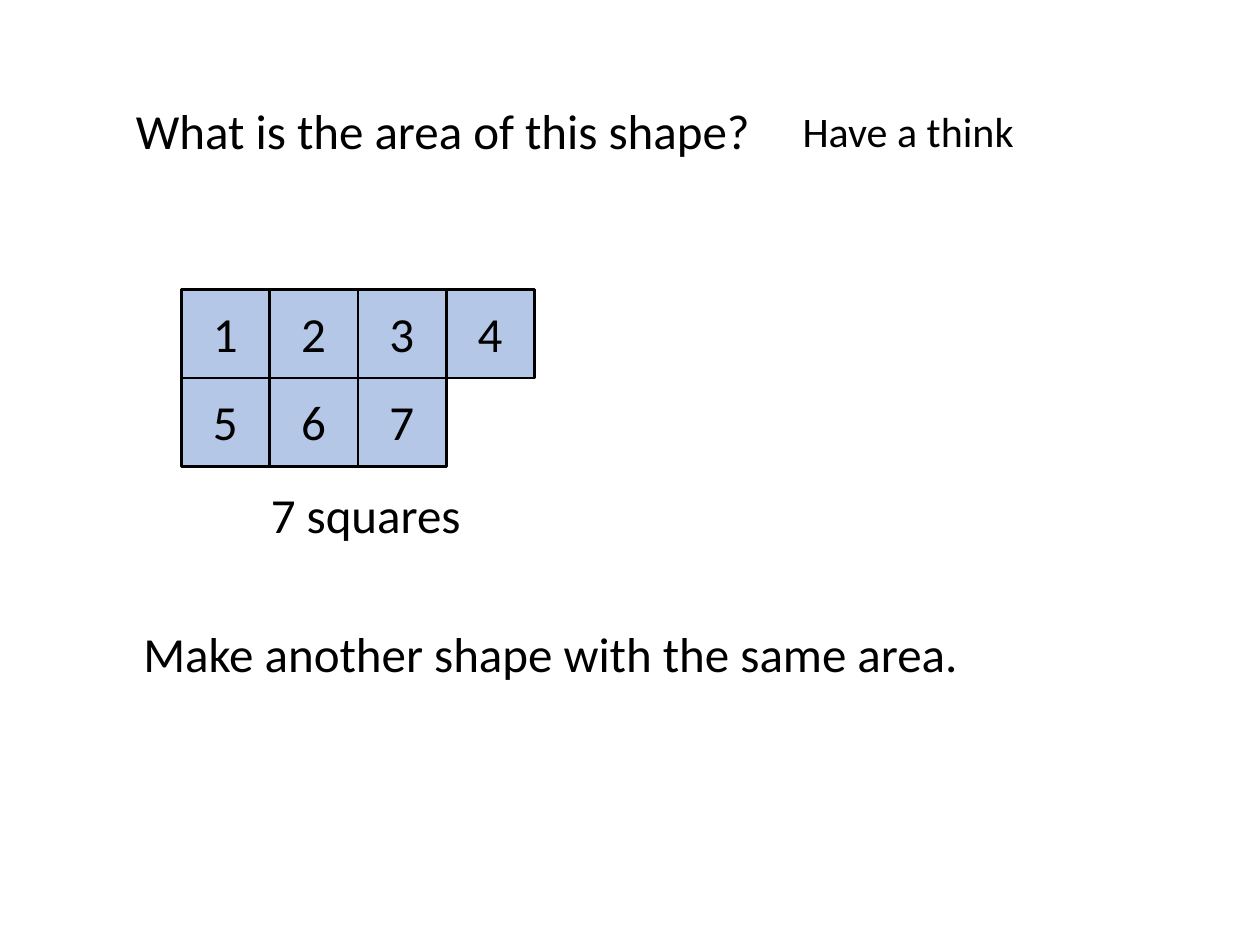
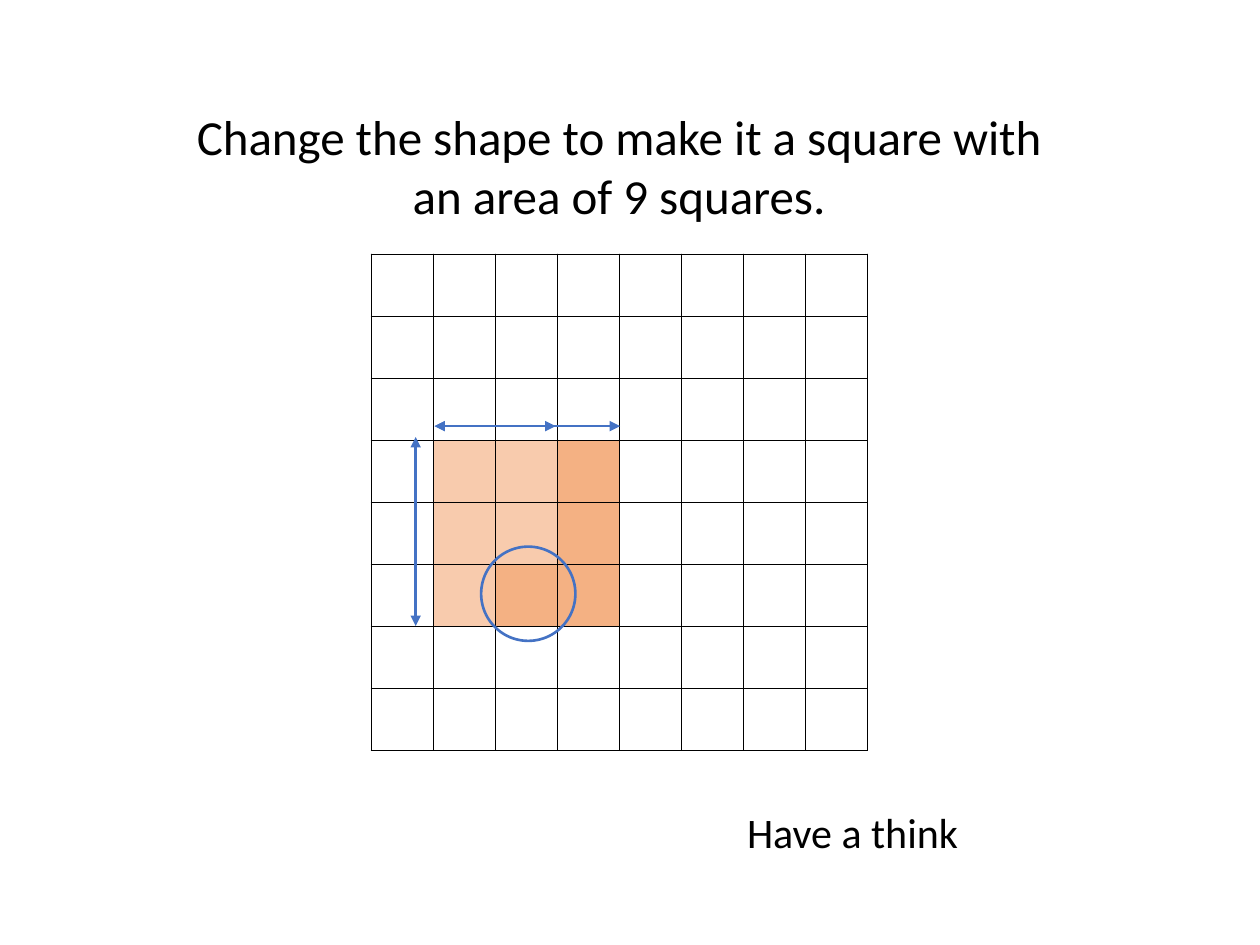
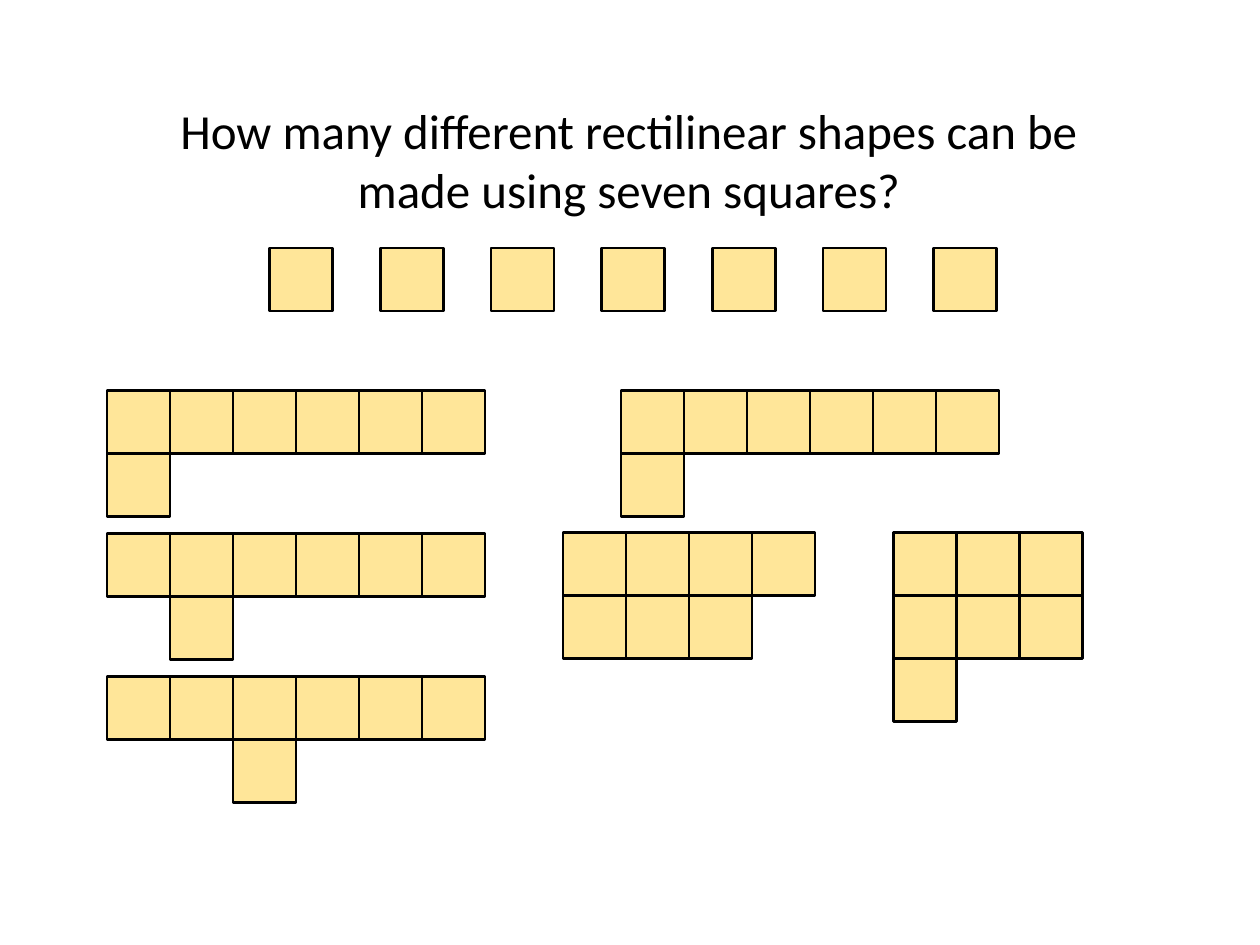
from lxml import etree
from pptx import Presentation
from pptx.dml.color import RGBColor
from pptx.enum.shapes import MSO_CONNECTOR, MSO_SHAPE
from pptx.enum.text import MSO_AUTO_SIZE, PP_ALIGN
from pptx.oxml.ns import qn
from pptx.util import Cm, Pt

RECTANGLE, OVAL = MSO_SHAPE.RECTANGLE, MSO_SHAPE.OVAL
STRAIGHT = MSO_CONNECTOR.STRAIGHT
LEFT, CENTER = PP_ALIGN.LEFT, PP_ALIGN.CENTER

FONT = "Calibri"
BODY, PROMPT = 28, 24
LINE_WIDTH = 1.5
COLORS = {
    "ink": "000000", "counted": "B4C7E7", "yellow": "FFE699",
    "start": "F8CBAD", "added": "F4B183", "mark": "4472C4",
}
THINK = "Have a think"

# Slide 1: text, left, top, width, height, size (lengths in cm)
AREA_TEXTS = [
    ("What is the area of this shape?", 2.49, 1.9, 18.16, 1.45, BODY),
    (THINK, 15.93, 2.01, 5.82, 1.27, PROMPT),
    ("7 squares", 5.21, 9.65, 7.57, 1.45, BODY),
    ("Make another shape with the same area.", 2.64, 12.45, 18.16, 1.45, BODY),
]
COUNTED_SHAPE = ["####", "###"]
COUNTED_AT, COUNTED_SIDE = (3.66, 5.84), 1.78

# Slide 2: the grid after each step, s = starting square, a = added square
CHANGE_TITLE = "Change the shape to make it a square with an area of 9 squares."
GRID_STEPS = [
    [".ss", ".ss", ".s."],
    [".ss", ".ss", ".sa"],
    [".ssa", ".ssa", ".saa"],
]
GRID_AT, GRID_COUNT, GRID_SIDE, FIRST_FILLED_ROW = (7.49, 5.13), 8, 1.25, 3
FILL_KEYS = {"s": "start", "a": "added"}
CIRCLE = (9.7, 11.02, 1.9, 1.9)
ARROWS = [
    (8.76, 8.59, 11.2, 8.59),
    (8.38, 8.81, 8.38, 12.62),
    (8.76, 8.59, 12.5, 8.59),
]

# Slide 3: loose squares, then arrangements of seven
SEVEN_TITLE = "How many different rectilinear shapes can be made using seven squares?"
SEVEN_SIDE = 1.27
LOOSE_AT, LOOSE_STEP, LOOSE_COUNT = (5.44, 5.0), 2.23, 7
ARRANGEMENTS = [
    (2.16, 7.87, ["######", "#"]),
    (2.16, 10.76, ["######", ".#"]),
    (2.16, 13.64, ["######", "..#"]),
    (12.52, 7.87, ["######", "#"]),
    (11.35, 10.74, ["####", "###"]),
    (18.01, 10.74, ["###", "###", "#"]),
]


def rgb(key):
    return RGBColor.from_string(COLORS[key])


def add_text(slide, text, left, top, width, height, size=BODY, align=LEFT):
    frame = slide.shapes.add_textbox(Cm(left), Cm(top), Cm(width), Cm(height)).text_frame
    frame.word_wrap = True
    frame.auto_size = MSO_AUTO_SIZE.SHAPE_TO_FIT_TEXT
    frame.text = text
    paragraph = frame.paragraphs[0]
    paragraph.alignment = align
    font = paragraph.runs[0].font
    font.name, font.size = FONT, Pt(size)
    font.color.rgb = rgb("ink")


def add_outline(slide, kind, left, top, width, height, line, fill=None):
    shape = slide.shapes.add_shape(kind, Cm(left), Cm(top), Cm(width), Cm(height))
    shape.shadow.inherit = False
    if fill:
        shape.fill.solid()
        shape.fill.fore_color.rgb = rgb(fill)
    else:
        shape.fill.background()
    shape.line.color.rgb = rgb(line)
    shape.line.width = Pt(LINE_WIDTH)


def add_squares(slide, left, top, side, rows, fill):
    """Draw one square per # and return their corners in reading order."""
    corners = [(left + col * side, top + row * side)
               for row, marks in enumerate(rows)
               for col, mark in enumerate(marks) if mark == "#"]
    for x, y in corners:
        add_outline(slide, RECTANGLE, x, y, side, side, "ink", fill)
    return corners


def add_arrow(slide, x1, y1, x2, y2):
    arrow = slide.shapes.add_connector(STRAIGHT, Cm(x1), Cm(y1), Cm(x2), Cm(y2))
    arrow.line.color.rgb = rgb("mark")
    arrow.line.width = Pt(LINE_WIDTH)
    line = arrow.line._get_or_add_ln()
    for end in ("a:headEnd", "a:tailEnd"):
        etree.SubElement(line, qn(end), type="triangle")
    etree.SubElement(arrow._element.spPr, qn("a:effectLst"))


def add_borders(cell):
    properties = cell._tc.get_or_add_tcPr()
    for place, edge in enumerate(("a:lnL", "a:lnR", "a:lnT", "a:lnB")):
        line = etree.Element(qn(edge), w=str(Pt(1)))
        solid = etree.SubElement(line, qn("a:solidFill"))
        etree.SubElement(solid, qn("a:srgbClr"), val=COLORS["ink"])
        properties.insert(place, line)


def add_grid(slide, filled_rows):
    left, top = GRID_AT
    extent = Cm(GRID_COUNT * GRID_SIDE)
    grid = slide.shapes.add_table(GRID_COUNT, GRID_COUNT, Cm(left), Cm(top),
                                  extent, extent).table
    grid.first_row = grid.horz_banding = False
    for cell in grid.iter_cells():
        cell.fill.background()
    for row, marks in enumerate(filled_rows, FIRST_FILLED_ROW):
        for col, mark in enumerate(marks):
            if mark in FILL_KEYS:
                fill = grid.cell(row, col).fill
                fill.solid()
                fill.fore_color.rgb = rgb(FILL_KEYS[mark])
    for cell in grid.iter_cells():
        add_borders(cell)


def build_area(slide):
    for item in AREA_TEXTS:
        add_text(slide, *item)
    corners = add_squares(slide, *COUNTED_AT, COUNTED_SIDE, COUNTED_SHAPE, "counted")
    for number, (x, y) in enumerate(corners, 1):
        add_text(slide, str(number), x + 0.38, y + 0.15, 1.02, 1.45)


def build_change(slide):
    add_text(slide, CHANGE_TITLE, 3.4, 2.03, 18.16, 2.64, align=CENTER)
    for filled_rows in GRID_STEPS:
        add_grid(slide, filled_rows)
    add_outline(slide, OVAL, *CIRCLE, "mark")
    for arrow in ARROWS:
        add_arrow(slide, *arrow)
    add_text(slide, THINK, 14.81, 16.13, 5.82, 1.27, PROMPT)


def build_seven(slide):
    add_text(slide, SEVEN_TITLE, 2.39, 1.9, 20.57, 2.64, align=CENTER)
    left, top = LOOSE_AT
    for i in range(LOOSE_COUNT):
        add_squares(slide, left + i * LOOSE_STEP, top, SEVEN_SIDE, ["#"], "yellow")
    for x, y, rows in ARRANGEMENTS:
        add_squares(slide, x, y, SEVEN_SIDE, rows, "yellow")


def main():
    deck = Presentation()
    deck.slide_width, deck.slide_height = Cm(25.4), Cm(19.05)
    blank = deck.slide_layouts[6]
    for build in (build_area, build_change, build_seven):
        build(deck.slides.add_slide(blank))
    deck.save("out.pptx")


if __name__ == "__main__":
    main()
